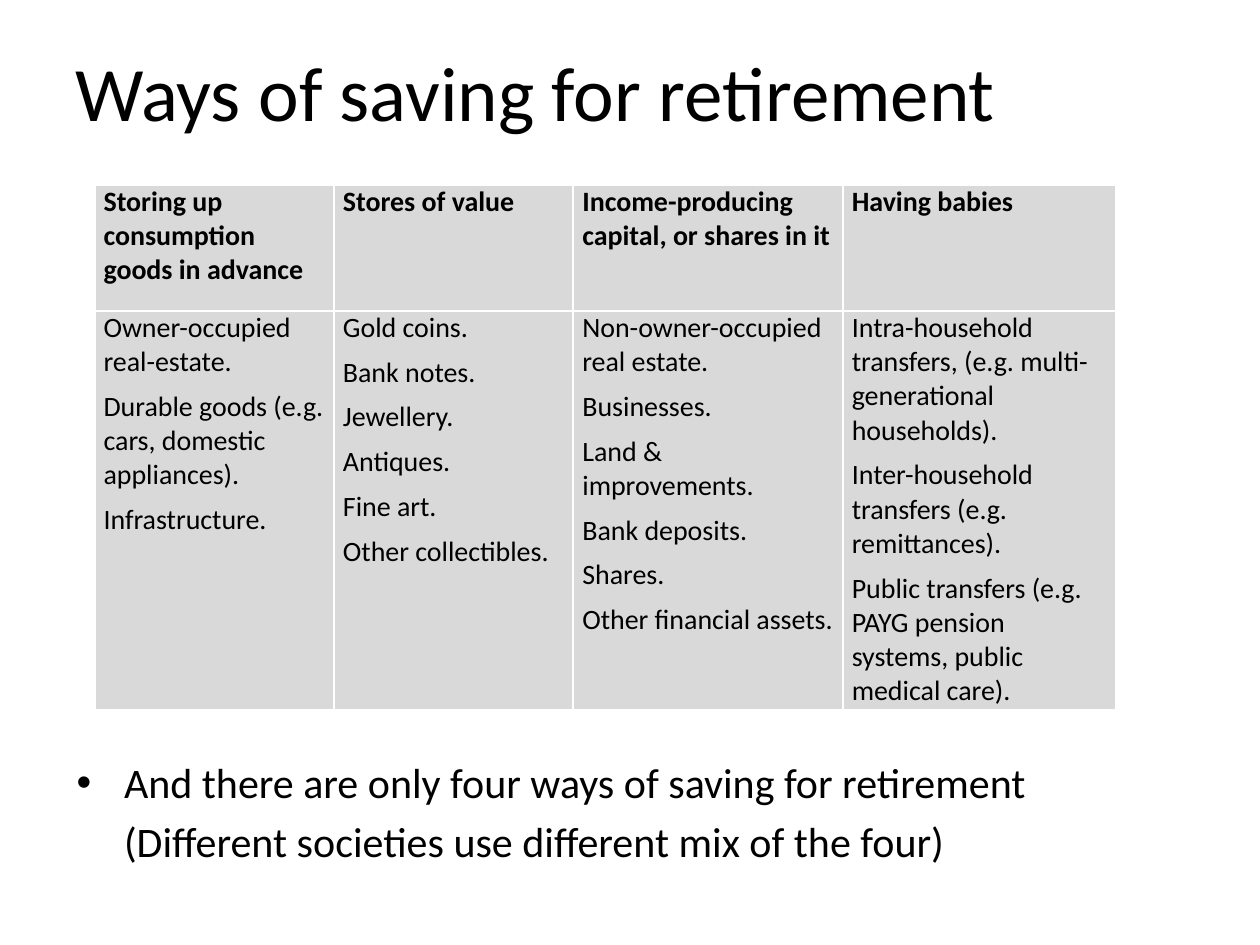
import pptx
import pptx.util
import pptx.dml.color
import pptx.enum.text
import pptx.oxml
import pptx.oxml.ns
import lxml.etree

Pt = pptx.util.Pt
BLACK = pptx.dml.color.RGBColor(0, 0, 0)
WHITE = pptx.dml.color.RGBColor(255, 255, 255)
GREY = pptx.dml.color.RGBColor(217, 217, 217)
FONT = "Calibri"

WAYS = [
    ("Storing up consumption goods in advance", 136.8,
     ["Owner-occupied real-estate.",
      "Durable goods (e.g. cars, domestic appliances).",
      "Infrastructure."]),
    ("Stores of value", 136.8,
     ["Gold coins.", "Bank notes.", "Jewellery.", "Antiques.", "Fine art.",
      "Other collectibles."]),
    ("Income-producing capital, or shares in it", 154,
     ["Non-owner-occupied real estate.", "Businesses.",
      "Land & improvements.", "Bank deposits.", "Shares.",
      "Other financial assets."]),
    ("Having babies", 156.2,
     ["Intra-household transfers, (e.g. multi-generational households).",
      "Inter-household transfers (e.g. remittances).",
      "Public transfers (e.g. PAYG pension systems, public medical care)."]),
]
NOTES = ["And there are only four ways of saving for retirement",
         "(Different societies use different mix of the four)"]


def add_child(node, tag, **attrs):
    child = lxml.etree.SubElement(node, pptx.oxml.ns.qn(tag))
    for name, value in attrs.items():
        child.set(name, str(value))
    return child


def write(frame, lines, size, bold=False):
    frame.word_wrap = True
    for i, line in enumerate(lines):
        para = frame.paragraphs[0] if i == 0 else frame.add_paragraph()
        run = para.add_run()
        run.text = line
        run.font.name = FONT
        run.font.size = Pt(size)
        run.font.bold = bold
        run.font.color.rgb = BLACK
    return frame.paragraphs


def add_box(slide, box):
    frame = slide.shapes.add_textbox(*map(Pt, box)).text_frame
    frame.vertical_anchor = pptx.enum.text.MSO_ANCHOR.TOP
    return frame


def add_title(slide, box):
    write(add_box(slide, box), ["Ways of saving for retirement"], 44)


def set_edges(cell):
    props = cell._tc.get_or_add_tcPr()
    for tag in ("a:lnL", "a:lnR", "a:lnT", "a:lnB"):
        edge = add_child(props, tag, w=Pt(1.5))
        add_child(add_child(edge, "a:solidFill"), "a:srgbClr", val=WHITE)


def fill_cell(cell, lines, bold):
    cell.margin_left = cell.margin_right = Pt(5.2)
    cell.margin_top = cell.margin_bottom = 0
    set_edges(cell)
    cell.fill.solid()
    cell.fill.fore_color.rgb = GREY
    for para in write(cell.text_frame, lines, 16, bold):
        para.space_after = Pt(6)


def add_ways(slide, box):
    table = slide.shapes.add_table(2, len(WAYS), *map(Pt, box)).table
    table.rows[0].height = Pt(72)
    table.rows[1].height = Pt(box[3] - 72)
    for col, (head, width, items) in enumerate(WAYS):
        table.columns[col].width = Pt(width)
        fill_cell(table.cell(0, col), [head], True)
        fill_cell(table.cell(1, col), items, False)


def add_notes(slide, box):
    paras = write(add_box(slide, box), NOTES, 24)
    for i, para in enumerate(paras):
        para.space_before = Pt(4.8)
        props = para._p.get_or_add_pPr()
        props.set("marL", str(Pt(27)))
        props.set("indent", str(Pt(0 if i else -27)))
        if i == 0:
            add_child(props, "a:buFont", typeface="Arial")
            add_child(props, "a:buChar", char="•")


def main():
    deck = pptx.Presentation()
    deck.slide_width, deck.slide_height = Pt(720), Pt(540)
    slide = deck.slides.add_slide(deck.slide_layouts[6])
    add_title(slide, (36, 22, 648, 90))
    add_ways(slide, (54, 105.6, 583.8, 300))
    add_notes(slide, (36.8, 429, 648, 55.4))
    deck.save("out.pptx")


if __name__ == "__main__":
    main()
